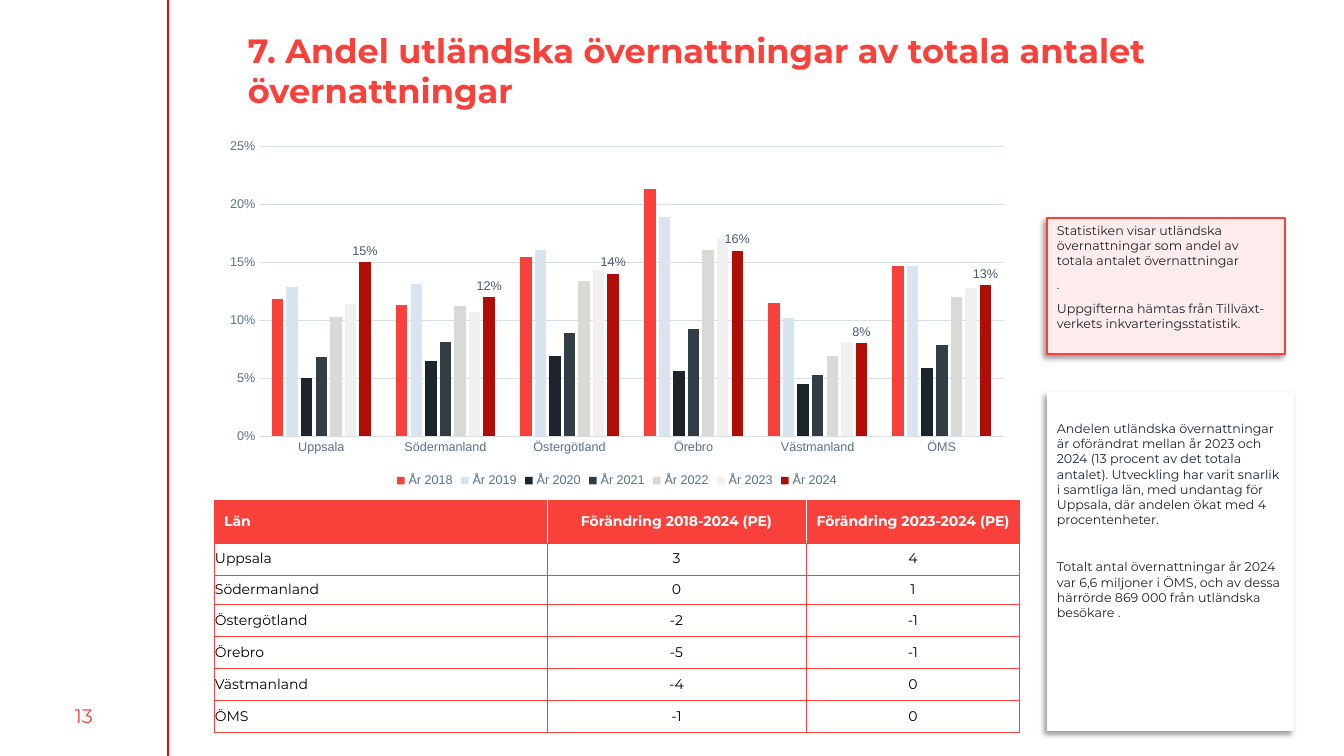
import pptx
import pptx.chart.data
import pptx.dml.color
import pptx.enum.chart
import pptx.enum.shapes
import pptx.enum.text
import pptx.oxml
import pptx.oxml.ns
import pptx.util

RGBColor = pptx.dml.color.RGBColor
Pt = pptx.util.Pt
ALIGN = pptx.enum.text.PP_ALIGN
ANCHOR = pptx.enum.text.MSO_ANCHOR
CHART = pptx.enum.chart

RED = RGBColor(0xF7, 0x41, 0x3A)
TABLE_RED = RGBColor(0xF8, 0x41, 0x3A)
RULE_RED = RGBColor(0xFF, 0x00, 0x00)
PINK = RGBColor(0xFE, 0xEC, 0xEC)
WHITE = RGBColor(0xFF, 0xFF, 0xFF)
BLACK = RGBColor(0x00, 0x00, 0x00)
INK = RGBColor(0x1D, 0x24, 0x2B)
AXIS_TEXT = RGBColor(0x5B, 0x71, 0x87)
LABEL_TEXT = RGBColor(0x49, 0x5B, 0x6C)
GRID = RGBColor(0xD8, 0xDE, 0xE5)
PALE_BLUE = RGBColor(0xD8, 0xE5, 0xF0)
SLATE = RGBColor(0x33, 0x3D, 0x46)
GREY = RGBColor(0xD9, 0xD9, 0xD6)
PALE_GREY = RGBColor(0xF0, 0xF0, 0xF0)
DARK_RED = RGBColor(0xB1, 0x0D, 0x06)

EMU_PER_PX = 914400 / 100.8
DRAWING_NS = pptx.oxml.ns.nsdecls("a")

COUNTIES = ["Uppsala", "Södermanland", "Östergötland", "Örebro", "Västmanland", "ÖMS"]
SERIES = [
    ("År 2018", TABLE_RED, [0.118, 0.113, 0.155, 0.213, 0.115, 0.147]),
    ("År 2019", PALE_BLUE, [0.129, 0.131, 0.161, 0.189, 0.102, 0.147]),
    ("År 2020", INK, [0.05, 0.065, 0.069, 0.056, 0.045, 0.059]),
    ("År 2021", SLATE, [0.068, 0.081, 0.089, 0.092, 0.053, 0.079]),
    ("År 2022", GREY, [0.103, 0.112, 0.134, 0.161, 0.069, 0.12]),
    ("År 2023", PALE_GREY, [0.114, 0.107, 0.143, 0.17, 0.081, 0.128]),
    ("År 2024", DARK_RED, [0.15, 0.12, 0.14, 0.16, 0.08, 0.13]),
]
HEADINGS = ["Län", "Förändring 2018-2024 (PE)", "Förändring 2023-2024 (PE)"]
CHANGES = [("3", "4"), ("0", "1"), ("-2", "-1"), ("-5", "-1"), ("-4", "0"), ("-1", "0")]


def px(length):
    return pptx.util.Emu(round(length * EMU_PER_PX))


def apply_format(target, **values):
    for name, value in values.items():
        setattr(target, name, value)


def format_font(font, size, color, name="Montserrat", bold=False):
    apply_format(font, size=Pt(size), name=name, bold=bold)
    font.color.rgb = color


def add_text(slide, box, text, size, **frame_format):
    shape = slide.shapes.add_textbox(*map(px, box))
    apply_format(shape.text_frame, word_wrap=True, **frame_format)
    paragraph = shape.text_frame.paragraphs[0]
    paragraph.text = text
    return paragraph


# Left margin: red rule and page number
def add_margin(slide, box):
    left, top, width, height = box
    rule = slide.shapes.add_connector(
        pptx.enum.shapes.MSO_CONNECTOR.STRAIGHT,
        *map(px, (left + width, top, left + width, top + height)))
    rule.line.color.rgb = RULE_RED
    rule.line.width = Pt(0.75)
    rule._element.spPr.append(pptx.oxml.parse_xml(f"<a:effectLst {DRAWING_NS}/>"))
    number = add_text(slide, (left, top + height - 60, width, 40), "13", 14,
                      vertical_anchor=ANCHOR.MIDDLE)
    number.alignment = ALIGN.CENTER
    format_font(number.font, 14, RED)


def add_title(slide, box):
    inset = px(5)
    title = add_text(slide, box, "7. Andel utländska övernattningar av totala antalet övernattningar",
                     24, margin_left=inset, margin_right=inset, margin_top=inset, margin_bottom=inset)
    format_font(title.font, 24, RED, bold=True)


# Column chart of shares per county and year
def add_share_chart(slide, box):
    data = pptx.chart.data.CategoryChartData(number_format="0%")
    data.categories = COUNTIES
    for name, color, shares in SERIES:
        data.add_series(name, shares)
    chart = slide.shapes.add_chart(CHART.XL_CHART_TYPE.COLUMN_CLUSTERED, *map(px, box), data).chart
    apply_format(chart, has_title=False, has_legend=True)
    format_font(chart.font, 10, INK, "Arial")
    apply_format(chart.legend, position=CHART.XL_LEGEND_POSITION.BOTTOM, include_in_layout=False)
    format_font(chart.legend.font, 9, AXIS_TEXT, "Arial")

    for axis in (chart.category_axis, chart.value_axis):
        apply_format(axis, major_tick_mark=CHART.XL_TICK_MARK.NONE,
                     minor_tick_mark=CHART.XL_TICK_MARK.NONE)
        format_font(axis.tick_labels.font, 9, AXIS_TEXT, "Arial")
    apply_format(chart.value_axis, minimum_scale=0, maximum_scale=0.25, major_unit=0.05,
                 has_major_gridlines=True)
    apply_format(chart.value_axis.tick_labels, number_format="0%", number_format_is_linked=False)
    chart.value_axis.format.line.fill.background()
    for line in (chart.category_axis.format.line, chart.value_axis.major_gridlines.format.line):
        line.color.rgb = GRID
        line.width = Pt(0.75)

    plot = chart.plots[0]
    apply_format(plot, gap_width=219, overlap=-27, vary_by_categories=False)
    for series, (name, color, shares) in zip(plot.series, SERIES):
        series.invert_if_negative = False
        series.format.fill.solid()
        series.format.fill.fore_color.rgb = color
    labels = plot.series[-1].data_labels
    apply_format(labels, show_value=True, number_format="0%", number_format_is_linked=False,
                 position=CHART.XL_LABEL_POSITION.OUTSIDE_END)
    format_font(labels.font, 9, LABEL_TEXT, "Arial")


def set_borders(cell, colors):
    properties = cell._tc.get_or_add_tcPr()
    for index, (side, color) in enumerate(colors.items()):
        properties.insert(index, pptx.oxml.parse_xml(
            f'<a:ln{side} {DRAWING_NS} w="9525"><a:solidFill><a:srgbClr val="{color}"/>'
            f"</a:solidFill></a:ln{side}>"))


# Table of changes in percentage points
def add_change_table(slide, box):
    rows = [HEADINGS] + [[county, *change] for county, change in zip(COUNTIES, CHANGES)]
    table = slide.shapes.add_table(len(rows), len(HEADINGS), *map(px, box)).table
    apply_format(table, first_row=False, horz_banding=False)
    for column, width in zip(table.columns, (333, 259, 214)):
        column.width = px(width)
    for row, height in zip(table.rows, (43, 32, 30, 32, 32, 32, 32)):
        row.height = px(height)
    for r, texts in enumerate(rows):
        for c, text in enumerate(texts):
            cell, header = table.cell(r, c), r == 0
            cell.vertical_anchor = ANCHOR.MIDDLE
            if not header:
                side = px(7 if c else 1)
                apply_format(cell, margin_left=side, margin_right=side, margin_top=0, margin_bottom=0)
            cell.fill.solid()
            cell.fill.fore_color.rgb = TABLE_RED if header else WHITE
            paragraph = cell.text_frame.paragraphs[0]
            paragraph.text = text
            if c:
                paragraph.alignment = ALIGN.CENTER
            format_font(paragraph.font, 10, WHITE if header else BLACK, bold=header)
            set_borders(cell, {
                "L": WHITE if header and c else TABLE_RED,
                "R": WHITE if header and c < len(texts) - 1 else TABLE_RED,
                "T": TABLE_RED, "B": TABLE_RED})


# Shadowed note: each text comes with the space before it in points
def add_note(slide, box, fill, outline, top_inset, texts):
    note = slide.shapes.add_shape(pptx.enum.shapes.MSO_SHAPE.RECTANGLE, *map(px, box))
    note.shadow.inherit = False
    note.fill.solid()
    note.fill.fore_color.rgb = fill
    if outline:
        note.line.color.rgb = outline
        note.line.width = Pt(1)
    else:
        note.line.fill.background()
    effects = note._element.spPr.find(pptx.oxml.ns.qn("a:effectLst"))
    effects.append(pptx.oxml.parse_xml(
        f'<a:outerShdw {DRAWING_NS} blurRad="50800" dist="38100" dir="8100000" algn="tr" '
        'rotWithShape="0"><a:srgbClr val="000000"><a:alpha val="40000"/></a:srgbClr></a:outerShdw>'))
    frame = note.text_frame
    apply_format(frame, word_wrap=True, vertical_anchor=ANCHOR.TOP, margin_top=px(top_inset))
    for index, (space, text) in enumerate(texts):
        paragraph = frame.add_paragraph() if index else frame.paragraphs[0]
        paragraph.text = text
        apply_format(paragraph, alignment=ALIGN.LEFT, space_before=Pt(space), space_after=Pt(3))
        format_font(paragraph.font, 9, INK)


def main():
    presentation = pptx.Presentation()
    apply_format(presentation, slide_width=px(1344), slide_height=px(756))
    slide = presentation.slides.add_slide(presentation.slide_layouts[6])
    add_margin(slide, (0, 0, 168, 756))
    add_title(slide, (243, 25, 1020, 90))
    add_note(slide, (1047, 218, 238, 136), PINK, RED, 5, [
        (0, "Statistiken visar utländska övernattningar som andel av totala antalet övernattningar"),
        (3, "."),
        (3, "Uppgifterna hämtas från Tillväxt-verkets inkvarteringsstatistik.")])
    add_note(slide, (1047, 392, 247, 339), WHITE, None, 29, [
        (0, "Andelen utländska övernattningar är oförändrat mellan år 2023 och 2024 (13 procent av "
            "det totala antalet). Utveckling har varit snarlik i samtliga län, med undantag för "
            "Uppsala, där andelen ökat med 4 procentenheter."),
        (20, "Totalt antal övernattningar år 2024 var 6,6 miljoner i ÖMS, och av dessa härrörde "
             "869 000 från utländska besökare .")])
    add_change_table(slide, (214, 500, 806, 233))
    add_share_chart(slide, (214, 132, 806, 360))
    presentation.save("out.pptx")


if __name__ == "__main__":
    main()
